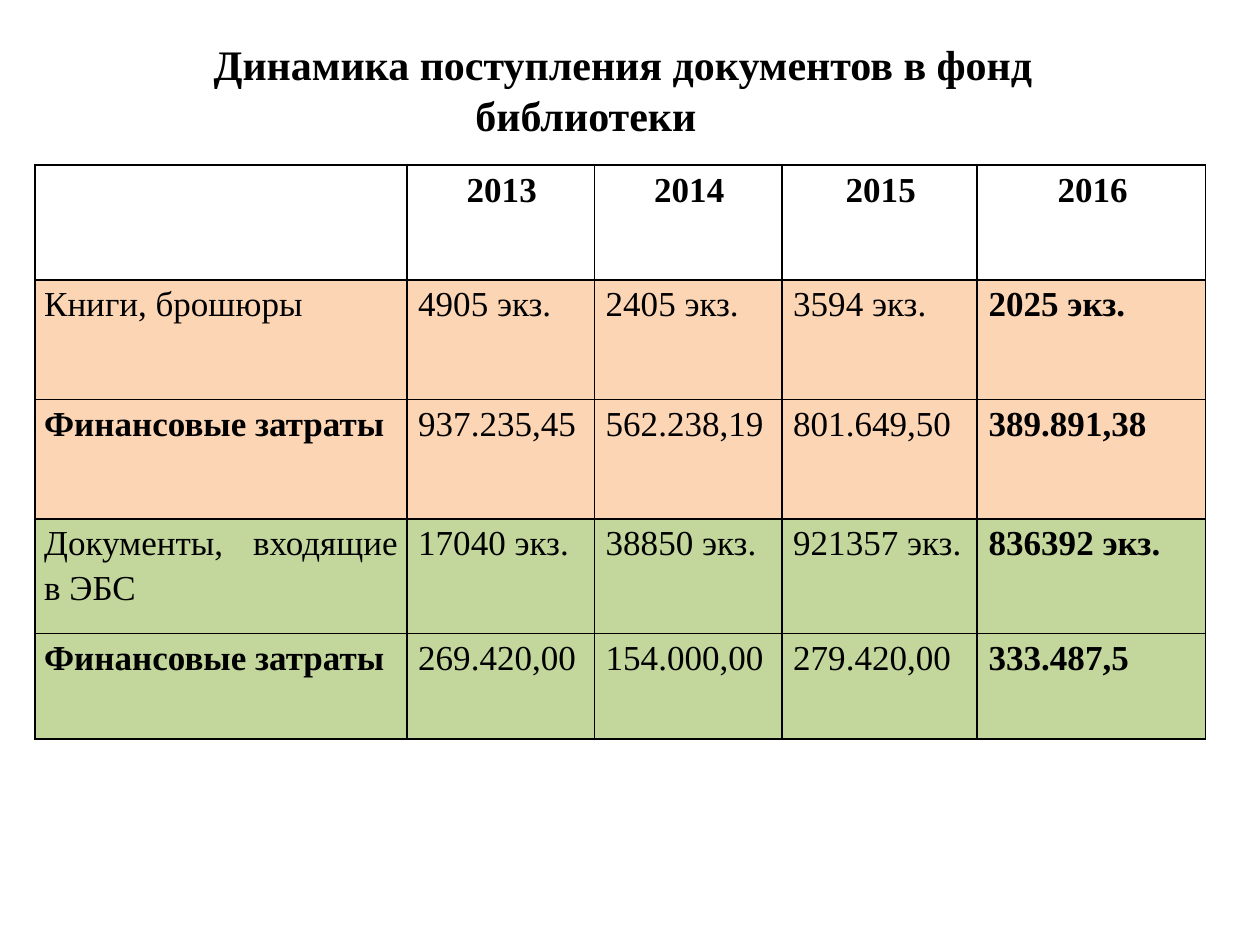
from lxml import etree
from pptx import Presentation
from pptx.dml.color import RGBColor
from pptx.enum.text import MSO_ANCHOR, MSO_AUTO_SIZE, PP_ALIGN
from pptx.oxml.ns import qn
from pptx.util import Cm, Pt

CENTER, JUSTIFY = PP_ALIGN.CENTER, PP_ALIGN.JUSTIFY
MIDDLE = MSO_ANCHOR.MIDDLE
NO_AUTOFIT = MSO_AUTO_SIZE.NONE

BLACK = RGBColor(0x00, 0x00, 0x00)
PEACH = RGBColor(0xFC, 0xD5, 0xB5)
GREEN = RGBColor(0xC3, 0xD6, 0x9B)

FONT = "Times New Roman"
TITLE = "Динамика поступления документов в фонд библиотеки"
COLUMN_WIDTHS = [7.49, 3.78, 3.78, 3.94, 4.6]
COST_LABEL = "Финансовые затраты"
# Row height in cm, fill, cell texts
ROWS = [
    (2.31, None, ["", "2013", "2014", "2015", "2016"]),
    (2.41, PEACH, ["Книги, брошюры", "4905 экз.", "2405 экз.", "3594 экз.", "2025 экз."]),
    (2.41, PEACH, [COST_LABEL, "937.235,45", "562.238,19", "801.649,50", "389.891,38"]),
    (2.31, GREEN, ["Документы, входящие в ЭБС", "17040 экз.", "38850 экз.",
                   "921357 экз.", "836392 экз."]),
    (2.13, GREEN, [COST_LABEL, "269.420,00", "154.000,00", "279.420,00", "333.487,5"]),
]


def format_paragraph(para, size, bold, align, indent):
    para.alignment = align
    para.font.name = FONT
    para.font.size = Pt(size)
    para.font.bold = bold
    para.font.color.rgb = BLACK
    properties = para._p.get_or_add_pPr()
    properties.set("marL", "0")
    properties.set("indent", str(indent))


def add_title(page):
    title = page.shapes.title
    title.left, title.top = Cm(2.31), Cm(0.64)
    title.width, title.height = Cm(19), Cm(2.31)
    frame = title.text_frame
    frame.text = TITLE
    frame.word_wrap = True
    frame.auto_size = NO_AUTOFIT
    frame.vertical_anchor = MIDDLE
    format_paragraph(frame.paragraphs[0], 24, True, CENTER, Cm(1.5))


def add_borders(cell):
    properties = cell._tc.get_or_add_tcPr()
    for side in ("lnL", "lnR", "lnT", "lnB"):
        line = etree.SubElement(properties, qn(f"a:{side}"), w=str(Pt(1)))
        fill = etree.SubElement(line, qn("a:solidFill"))
        etree.SubElement(fill, qn("a:srgbClr"), val=str(BLACK))


def fill_cell(cell, text, color, bold, align, indent):
    cell.margin_left = cell.margin_right = Cm(0.18)
    cell.margin_top = cell.margin_bottom = 0
    add_borders(cell)
    if color is None:
        cell.fill.background()
    else:
        cell.fill.solid()
        cell.fill.fore_color.rgb = color
    cell.text = text
    para = cell.text_frame.paragraphs[0]
    para.line_spacing = 1.15
    format_paragraph(para, 20, bold, align, indent)


def add_acquisitions_table(page):
    heights = [height for height, _, _ in ROWS]
    table = page.shapes.add_table(
        len(ROWS), len(COLUMN_WIDTHS), Cm(0.71), Cm(3.33),
        Cm(sum(COLUMN_WIDTHS)), Cm(sum(heights))).table
    for column, width in zip(table.columns, COLUMN_WIDTHS):
        column.width = Cm(width)
    last_column = len(COLUMN_WIDTHS) - 1
    for r, (height, color, texts) in enumerate(ROWS):
        table.rows[r].height = Cm(height)
        for c, text in enumerate(texts):
            bold = r == 0 or c == last_column or text == COST_LABEL
            align = CENTER if r == 0 else JUSTIFY
            indent = Cm(0.05) if c else 0
            fill_cell(table.cell(r, c), text, color, bold, align, indent)


def main():
    deck = Presentation()
    deck.slide_width, deck.slide_height = Cm(25.4), Cm(19.05)
    page = deck.slides.add_slide(deck.slide_layouts.get_by_name("Title Only"))
    add_acquisitions_table(page)
    add_title(page)
    deck.save("out.pptx")


if __name__ == "__main__":
    main()
